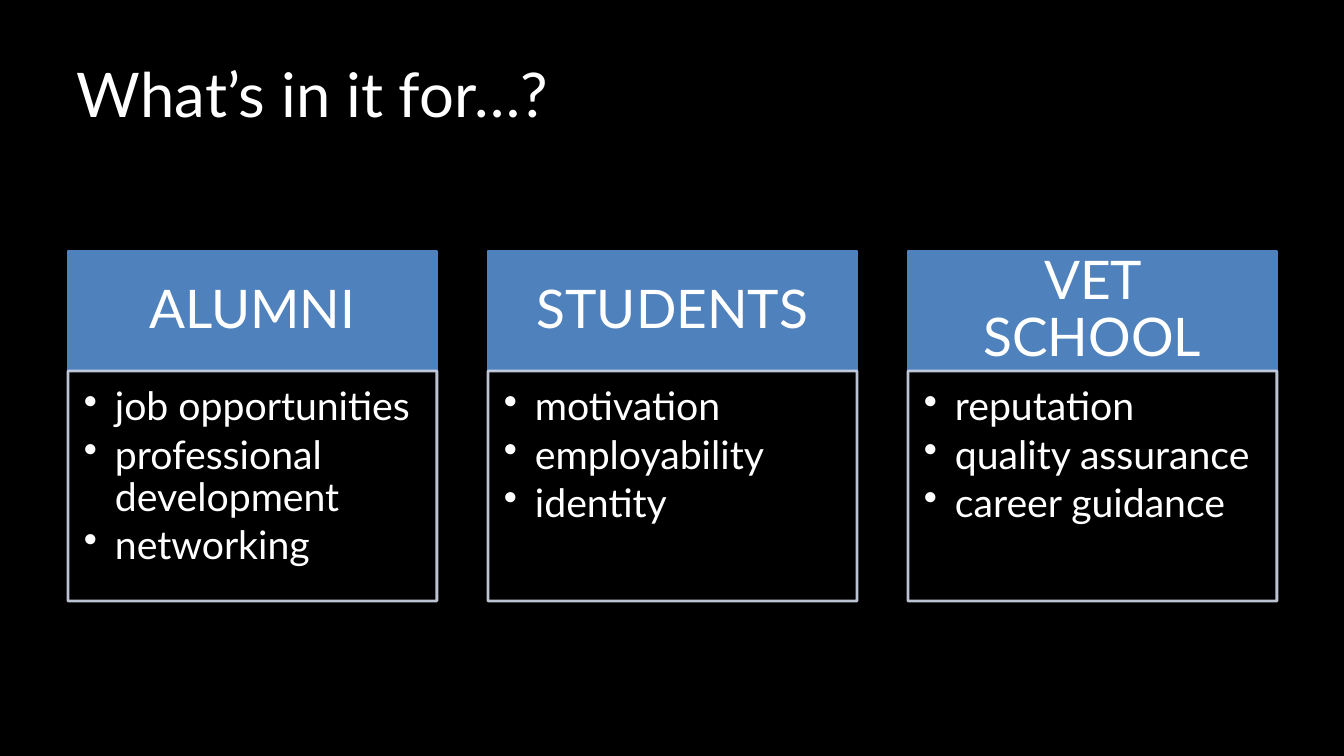
from typing import NamedTuple

from lxml.etree import SubElement
from pptx import Presentation
from pptx.dml.color import RGBColor
from pptx.enum.shapes import MSO_SHAPE as Preset
from pptx.enum.text import MSO_ANCHOR as Anchor, PP_ALIGN as Align
from pptx.oxml.ns import qn
from pptx.util import Emu, Pt

EMU_PER_PX = 914400 / 100.8
FONT = "Lato"
COLORS = {"black": "000000", "white": "FFFFFF", "blue": "4F81BD", "pale": "D0D8E8"}
OPACITY = "90000"

COLUMN_LEFT, COLUMN_WIDTH, COLUMN_PITCH = 68, 369, 420
HEADER_TOP, HEADER_HEIGHT = 251, 120
BODY_TOP, BODY_HEIGHT = 371, 230
BULLET_INDENT = 31


class Column(NamedTuple):
    heading: str
    benefits: tuple[str, ...]


class TextStyle(NamedTuple):
    size: int
    insets: tuple[int, int, int, int]
    frame: dict
    paragraph: dict
    bulleted: bool = False


COLUMNS = (
    Column("ALUMNI", ("job opportunities", "professional development", "networking")),
    Column("STUDENTS", ("motivation", "employability", "identity")),
    Column("VET SCHOOL", ("reputation", "quality assurance", "career guidance")),
)
TITLE_STYLE = TextStyle(44, (10, 5, 10, 5), {"vertical_anchor": Anchor.MIDDLE},
                        {"alignment": Align.LEFT})
HEADER_STYLE = TextStyle(38, (30, 17, 30, 17), {"vertical_anchor": Anchor.MIDDLE},
                         {"alignment": Align.CENTER, "line_spacing": 0.9})
BODY_STYLE = TextStyle(28, (16, 16, 22, 24), {"vertical_anchor": Anchor.TOP},
                       {"alignment": Align.LEFT, "line_spacing": 0.9,
                        "space_after": Pt(4.2)}, bulleted=True)


def px(length: int) -> Emu:
    return Emu(round(length * EMU_PER_PX))


def color(name: str) -> RGBColor:
    return RGBColor.from_string(COLORS[name])


def set_attributes(target, values: dict) -> None:
    for name, value in values.items():
        setattr(target, name, value)


def add_bullet(para) -> None:
    properties = para._p.get_or_add_pPr()
    properties.set("marL", str(px(BULLET_INDENT)))
    properties.set("indent", str(-px(BULLET_INDENT)))
    SubElement(properties, qn("a:buChar")).set("char", "•")


def write_text(shape, lines: tuple[str, ...], style: TextStyle) -> None:
    frame = shape.text_frame
    frame.word_wrap = True
    set_attributes(frame, style.frame)
    sides = ("margin_left", "margin_top", "margin_right", "margin_bottom")
    set_attributes(frame, dict(zip(sides, map(px, style.insets))))
    for index, line in enumerate(lines):
        para = frame.add_paragraph() if index else frame.paragraphs[0]
        if style.bulleted:
            add_bullet(para)
        set_attributes(para, style.paragraph)
        span = para.add_run()
        span.text = line
        set_attributes(span.font, {"name": FONT, "size": Pt(style.size)})
        span.font.color.rgb = color("white")


def add_panel(page, left: int, top: int, height: int, fill: str, line: str):
    panel = page.shapes.add_shape(Preset.RECTANGLE, px(left), px(top),
                                  px(COLUMN_WIDTH), px(height))
    panel.shadow.inherit = False
    panel.fill.solid()
    panel.fill.fore_color.rgb = color(fill)
    panel.line.color.rgb = color(line)
    panel.line.width = Pt(2)
    return panel


def make_translucent(panel) -> None:
    for tone in panel._element.spPr.iter(qn("a:srgbClr")):
        SubElement(tone, qn("a:alpha")).set("val", OPACITY)


def add_column(page, left: int, column: Column) -> None:
    header = add_panel(page, left, HEADER_TOP, HEADER_HEIGHT, "blue", "blue")
    write_text(header, (column.heading,), HEADER_STYLE)
    body = add_panel(page, left, BODY_TOP, BODY_HEIGHT, "black", "pale")
    make_translucent(body)
    write_text(body, column.benefits, BODY_STYLE)


def main() -> None:
    deck = Presentation()
    set_attributes(deck, {"slide_width": px(1344), "slide_height": px(756)})
    page = deck.slides.add_slide(deck.slide_layouts[6])
    page.background.fill.solid()
    page.background.fill.fore_color.rgb = color("black")

    title = page.shapes.add_textbox(px(67), px(30), px(1210), px(126))
    write_text(title, ("What’s in it for…?",), TITLE_STYLE)
    for index, column in enumerate(COLUMNS):
        add_column(page, COLUMN_LEFT + index * COLUMN_PITCH, column)
    deck.save("out.pptx")


if __name__ == "__main__":
    main()
